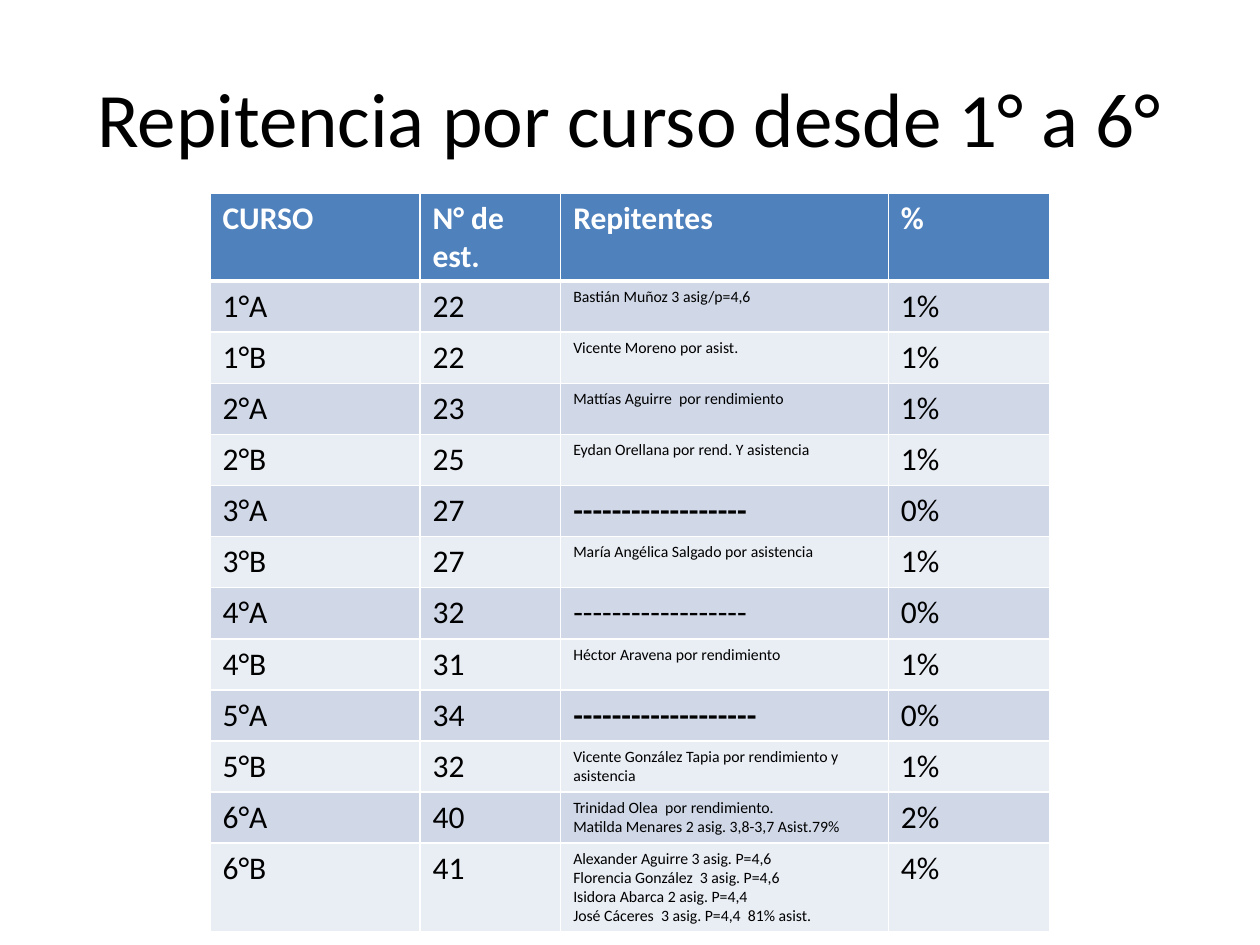
from dataclasses import dataclass

from lxml import etree
from pptx import Presentation
from pptx.dml.color import RGBColor
from pptx.enum.text import MSO_ANCHOR, PP_ALIGN
from pptx.oxml.ns import qn
from pptx.util import Pt

MIDDLE = MSO_ANCHOR.MIDDLE
CENTER = PP_ALIGN.CENTER


@dataclass(frozen=True)
class Theme:
    font: str = "Calibri"
    title: int = 44
    body: int = 18
    detail: int = 9
    text: str = "000000"
    header_text: str = "FFFFFF"
    header: str = "4F81BD"
    bands: tuple = ("D0D8E8", "E9EDF4")
    border: str = "FFFFFF"


THEME = Theme()

HEADINGS = ("CURSO", "N° de est.", "Repitentes", "%")
COURSES = [
    ("1°A", "22", "Bastián Muñoz 3 asig/p=4,6", "1%"),
    ("1°B", "22", "Vicente Moreno por asist.", "1%"),
    ("2°A", "23", "Mattías Aguirre  por rendimiento", "1%"),
    ("2°B", "25", "Eydan Orellana por rend. Y asistencia", "1%"),
    ("3°A", "27", "------------------", "0%"),
    ("3°B", "27", "María Angélica Salgado por asistencia", "1%"),
    ("4°A", "32", "------------------", "0%"),
    ("4°B", "31", "Héctor Aravena por rendimiento", "1%"),
    ("5°A", "34", "-------------------", "0%"),
    ("5°B", "32", "Vicente González Tapia por rendimiento y asistencia", "1%"),
    ("6°A", "40", "Trinidad Olea  por rendimiento.\n"
                  "Matilda Menares 2 asig. 3,8-3,7 Asist.79%", "2%"),
    ("6°B", "41", "Alexander Aguirre 3 asig. P=4,6\n"
                  "Florencia González  3 asig. P=4,6\n"
                  "Isidora Abarca 2 asig. P=4,4\n"
                  "José Cáceres  3 asig. P=4,4  81% asist.", "4%"),
]
BOLD_DASHES = ("3°A", "5°A")
COLUMN_WIDTHS = (120, 80.4, 187.2, 92.4)
ROW_HEIGHT = 29.2


def style_text(tf, size, color, bold=False):
    for p in tf.paragraphs:
        p.font.name = THEME.font
        p.font.size = Pt(size)
        p.font.bold = bold
        p.font.color.rgb = RGBColor.from_string(color)


def set_borders(cell, **widths):
    """Draw the cell's edges; widths in points, keyed L, R, T, B in that order."""
    tc_pr = cell._tc.get_or_add_tcPr()
    for side, width in widths.items():
        ln = etree.SubElement(tc_pr, qn(f"a:ln{side}"), w=str(Pt(width)))
        fill = etree.SubElement(ln, qn("a:solidFill"))
        etree.SubElement(fill, qn("a:srgbClr"), val=THEME.border)


prs = Presentation()
prs.slide_width, prs.slide_height = Pt(720), Pt(540)
s = prs.slides.add_slide(prs.slide_layouts[6])

title = s.shapes.add_textbox(Pt(36), Pt(21.6), Pt(648), Pt(90))
tf = title.text_frame
tf.word_wrap = True
tf.vertical_anchor = MIDDLE
tf.text = "Repitencia por curso desde 1° a 6°"
tf.paragraphs[0].alignment = CENTER
style_text(tf, THEME.title, THEME.text)

rows = [HEADINGS, *COURSES]
table = s.shapes.add_table(
    len(rows), len(HEADINGS), Pt(120), Pt(110.2),
    Pt(sum(COLUMN_WIDTHS)), Pt(ROW_HEIGHT * len(rows))).table
for column, width in zip(table.columns, COLUMN_WIDTHS):
    column.width = Pt(width)

for i, values in enumerate(rows):
    table.rows[i].height = Pt(ROW_HEIGHT)
    for j, value in enumerate(values):
        cell = table.cell(i, j)
        cell.text = value
        is_header = i == 0
        is_dashes = value.startswith("-")
        is_detail = j == 2 and not is_header and not is_dashes
        style_text(cell.text_frame,
                   THEME.detail if is_detail else THEME.body,
                   THEME.header_text if is_header else THEME.text,
                   bold=is_header or (is_dashes and values[0] in BOLD_DASHES))
        set_borders(cell, L=1, R=1, T=3 if i == 1 else 1, B=3 if is_header else 1)
        cell.fill.solid()
        cell.fill.fore_color.rgb = RGBColor.from_string(
            THEME.header if is_header else THEME.bands[(i - 1) % 2])

prs.save("out.pptx")
